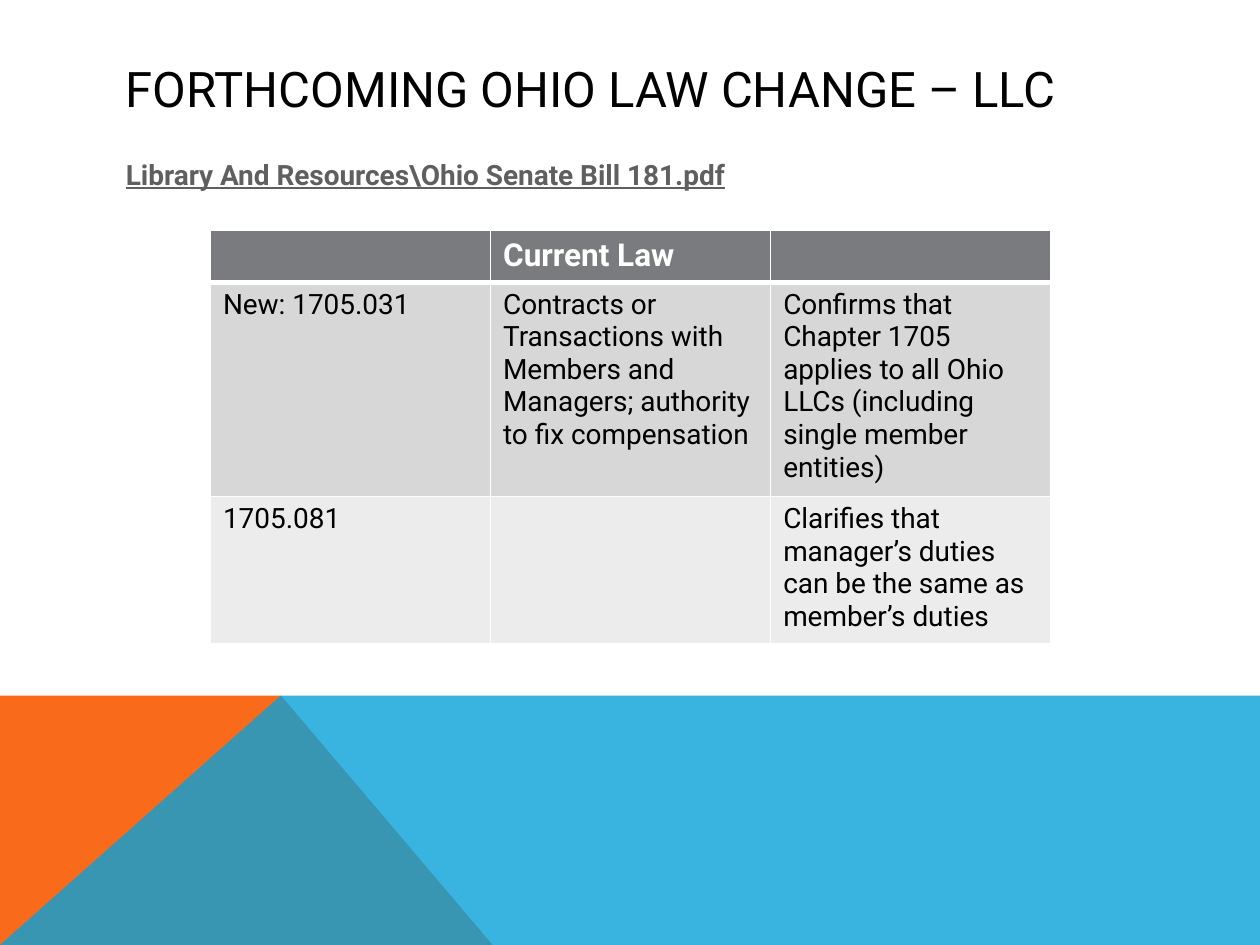
import pptx
import pptx.dml.color
import pptx.enum.text
import pptx.oxml.ns
import pptx.util
from lxml import etree

Inches = pptx.util.Inches
Pt = pptx.util.Pt
RGBColor = pptx.dml.color.RGBColor
qn = pptx.oxml.ns.qn

FONT = "Roboto"
BLACK = RGBColor(0x00, 0x00, 0x00)
WHITE = RGBColor(0xFF, 0xFF, 0xFF)
LINK_GRAY = RGBColor(0x5F, 0x5F, 0x5F)
HEADER_GRAY = RGBColor(0x79, 0x7B, 0x7E)
BANDS = [RGBColor(0xD7, 0xD7, 0xD8), RGBColor(0xEC, 0xEC, 0xEC)]
ORANGE = RGBColor(0xF9, 0x6A, 0x1B)
BLUE = RGBColor(0x08, 0xA1, 0xD9)

ROWS = [
    ["", "Current Law", ""],
    ["New: 1705.031",
     "Contracts or Transactions with Members and Managers; "
     "authority to fix compensation",
     "Confirms that Chapter 1705 applies to all Ohio LLCs "
     "(including single member entities)"],
    ["1705.081", "",
     "Clarifies that manager’s duties can be the same as member’s duties"],
]


def write(tf, text, size=16, color=BLACK, bold=False, underline=False):
    r = tf.paragraphs[0].add_run()
    r.text = text
    r.font.name = FONT
    r.font.size = Pt(size)
    r.font.color.rgb = color
    r.font.bold = bold
    r.font.underline = underline


def set_border(cell, side, width):
    """Draw one white cell edge; side is L, R, T or B. Call before filling."""
    ln = etree.SubElement(cell._tc.get_or_add_tcPr(), qn(f"a:ln{side}"),
                          w=str(Pt(width)))
    fill = etree.SubElement(ln, qn("a:solidFill"))
    etree.SubElement(fill, qn("a:srgbClr"), val=str(WHITE))


class SlideBuilder:
    def __init__(self, prs):
        self.s = prs.slides.add_slide(prs.slide_layouts[6])
        self.s.background.fill.solid()
        self.s.background.fill.fore_color.rgb = WHITE

    def polygon(self, points, color, opacity=100):
        start, *rest = [(Inches(x), Inches(y)) for x, y in points]
        builder = self.s.shapes.build_freeform(*start)
        builder.add_line_segments(rest, close=True)
        sp = builder.convert_to_shape()
        sp.shadow.inherit = False
        sp.line.fill.background()
        sp.fill.solid()
        sp.fill.fore_color.rgb = color
        if opacity < 100:
            clr = sp._element.spPr.find(qn("a:solidFill"))[0]
            etree.SubElement(clr, qn("a:alpha"), val=str(opacity * 1000))

    def text(self, x, y, w, h, text, anchor, **fmt):
        sp = self.s.shapes.add_textbox(Inches(x), Inches(y), Inches(w), Inches(h))
        tf = sp.text_frame
        tf.word_wrap = True
        tf.vertical_anchor = anchor
        write(tf, text, **fmt)

    def table(self, x, y, w, heights, rows):
        table = self.s.shapes.add_table(
            len(rows), len(rows[0]), Inches(x), Inches(y),
            Inches(w), Inches(sum(heights))).table
        for i, row in enumerate(rows):
            table.rows[i].height = Inches(heights[i])
            for j, text in enumerate(row):
                self.cell(table.cell(i, j), text, i)

    def cell(self, cell, text, row):
        header = row == 0
        for side in "LRTB":
            thick = (header and side == "B") or (row == 1 and side == "T")
            set_border(cell, side, 3 if thick else 1)
        cell.fill.solid()
        cell.fill.fore_color.rgb = HEADER_GRAY if header else BANDS[(row - 1) % 2]
        if text and header:
            write(cell.text_frame, text, size=18, color=WHITE, bold=True)
        elif text:
            write(cell.text_frame, text)


def main():
    prs = pptx.Presentation()
    prs.slide_width, prs.slide_height = Inches(10), Inches(7.5)
    slide = SlideBuilder(prs)
    top, bottom, peak = 5.52, 7.5, 2.23
    slide.polygon([(0, bottom), (0, top), (peak, top), (3.91, bottom)], ORANGE)
    slide.polygon([(0, bottom), (peak, top), (10, top), (10, bottom)], BLUE,
                  opacity=80)
    anchors = pptx.enum.text.MSO_ANCHOR
    slide.text(0.9, 0.4, 8.22, 0.6, "FORTHCOMING OHIO LAW CHANGE – LLC",
               anchors.MIDDLE, size=28)
    slide.text(0.9, 1.2, 8.22, 3.91,
               r"Library And Resources\Ohio Senate Bill 181.pdf",
               anchors.TOP, color=LINK_GRAY, bold=True, underline=True)
    slide.table(1.67, 1.83, 6.67, [0.41, 1.65, 1.13], ROWS)
    prs.save("out.pptx")


if __name__ == "__main__":
    main()
